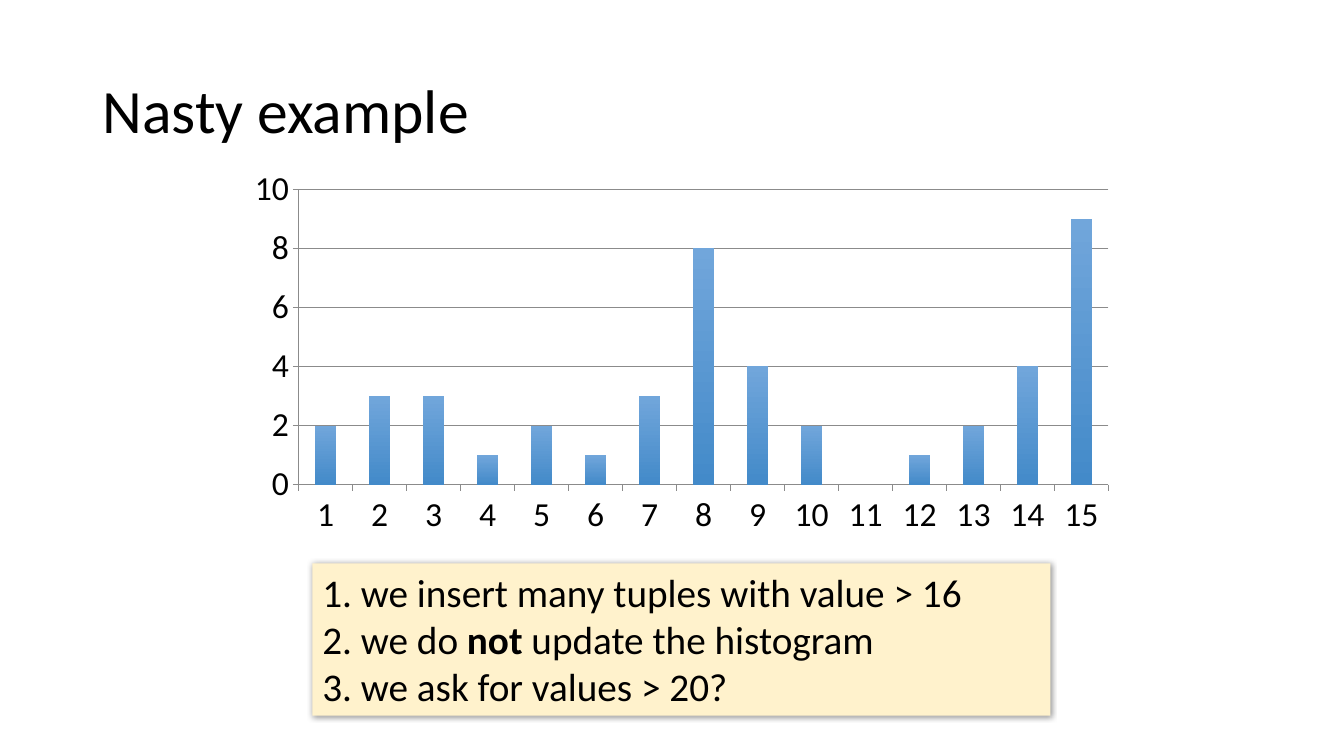
from dataclasses import dataclass

from lxml import etree
from pptx import Presentation
from pptx import util as u
from pptx.chart.data import CategoryChartData
from pptx.dml.color import RGBColor
from pptx.enum import chart as charts
from pptx.enum import shapes, text
from pptx.oxml import ns

SLIDE_WIDTH, SLIDE_HEIGHT = u.Inches(13.33), u.Inches(7.5)
FONT = "Calibri"
BLACK = RGBColor(0x00, 0x00, 0x00)
AXIS_GREY = RGBColor(0x8B, 0x8B, 0x8B)
BAR_TOP = RGBColor(0x71, 0xA6, 0xDB)
BAR_BOTTOM = RGBColor(0x43, 0x8A, 0xC9)
NOTE_FILL = RGBColor(0xFF, 0xF2, 0xCC)

FREQUENCIES = (2, 3, 3, 1, 2, 1, 3, 8, 4, 2, 0, 1, 2, 4, 9)


@dataclass(frozen=True)
class Area:
    """A rectangle in percent of the slide's width and height."""
    left: float
    top: float
    width: float
    height: float

    def box(self) -> tuple[int, int, int, int]:
        return (int(SLIDE_WIDTH * self.left / 100), int(SLIDE_HEIGHT * self.top / 100),
                int(SLIDE_WIDTH * self.width / 100), int(SLIDE_HEIGHT * self.height / 100))


@dataclass(frozen=True)
class Step:
    """One line of the note, with an optional bold word inside."""
    before: str
    bold: str = ""
    after: str = ""


TITLE_AREA = Area(6.88, 5.33, 86.25, 19.33)
CHART_AREA = Area(17.63, 21.33, 66.17, 50.53)
NOTE_AREA = Area(23.25, 74.53, 54.9, 20.13)
STEPS = (
    Step("1. we insert many tuples with value > 16"),
    Step("2. we do ", "not ", "update the histogram"),
    Step("3. we ask for values > 20?"),
)


def style_font(font, size: float, bold: bool = False) -> None:
    font.name, font.size, font.bold = FONT, u.Pt(size), bold
    font.color.rgb = BLACK


def add_title(slide, title_text: str) -> None:
    title = slide.shapes.title
    title.left, title.top, title.width, title.height = TITLE_AREA.box()
    frame = title.text_frame
    frame.text = title_text
    frame.auto_size = text.MSO_AUTO_SIZE.NONE
    frame.vertical_anchor = text.MSO_ANCHOR.MIDDLE
    paragraph = frame.paragraphs[0]
    paragraph.alignment = text.PP_ALIGN.LEFT
    paragraph.line_spacing = 0.9
    style_font(paragraph.runs[0].font, 44)


def add_histogram(slide) -> None:
    data = CategoryChartData()
    data.categories = [str(value) for value in range(1, len(FREQUENCIES) + 1)]
    data.add_series("Series 1", FREQUENCIES)
    chart = slide.shapes.add_chart(
        charts.XL_CHART_TYPE.COLUMN_CLUSTERED, *CHART_AREA.box(), data).chart
    chart.has_legend = chart.has_title = False
    style_font(chart.font, 24)

    # Axes and gridlines
    value_axis = chart.value_axis
    value_axis.minimum_scale, value_axis.maximum_scale, value_axis.major_unit = 0, 10, 2
    value_axis.has_major_gridlines = True
    for axis in (chart.category_axis, value_axis):
        axis.major_tick_mark = charts.XL_TICK_MARK.OUTSIDE
        style_font(axis.tick_labels.font, 24)
    for line in (chart.category_axis.format.line, value_axis.format.line,
                 value_axis.major_gridlines.format.line):
        line.color.rgb = AXIS_GREY
        line.width = u.Pt(0.75)

    # Bars shaded from top to bottom
    plot = chart.plots[0]
    plot.gap_width = 150
    plot.vary_by_categories = False
    fill = plot.series[0].format.fill
    fill.gradient()
    fill.gradient_angle = 270
    for stop, color in zip(fill.gradient_stops, (BAR_TOP, BAR_BOTTOM)):
        stop.color.rgb = color
    fill.gradient_stops[0].position = 0
    fill.gradient_stops[1].position = 1


def add_shadow(shape, blur: float, distance: float, angle: int, opacity: int) -> None:
    shape.shadow.inherit = False
    effects = shape.element.spPr.find(ns.qn("a:effectLst"))
    shadow = etree.SubElement(
        effects, ns.qn("a:outerShdw"), blurRad=str(u.Pt(blur)), dist=str(u.Pt(distance)),
        dir=str(angle * 60000), algn="tl", rotWithShape="0")
    color = etree.SubElement(shadow, ns.qn("a:srgbClr"), val=str(BLACK))
    etree.SubElement(color, ns.qn("a:alpha"), val=str(opacity * 1000))


def add_note(slide, steps: tuple[Step, ...]) -> None:
    note = slide.shapes.add_shape(shapes.MSO_SHAPE.RECTANGLE, *NOTE_AREA.box())
    note.fill.solid()
    note.fill.fore_color.rgb = NOTE_FILL
    note.line.fill.background()
    add_shadow(note, blur=4, distance=1, angle=45, opacity=40)

    frame = note.text_frame
    frame.word_wrap = True
    frame.auto_size = text.MSO_AUTO_SIZE.SHAPE_TO_FIT_TEXT
    frame.vertical_anchor = text.MSO_ANCHOR.TOP
    for index, step in enumerate(steps):
        paragraph = frame.add_paragraph() if index else frame.paragraphs[0]
        paragraph.alignment = text.PP_ALIGN.LEFT
        for part in filter(None, (step.before, step.bold, step.after)):
            run = paragraph.add_run()
            run.text = part
            style_font(run.font, 28, bold=part == step.bold)


def main() -> None:
    presentation = Presentation()
    presentation.slide_width, presentation.slide_height = SLIDE_WIDTH, SLIDE_HEIGHT
    title_only = presentation.slide_layouts[5]
    slide = presentation.slides.add_slide(title_only)
    add_title(slide, "Nasty example")
    add_histogram(slide)
    add_note(slide, STEPS)
    presentation.save("out.pptx")


if __name__ == "__main__":
    main()
